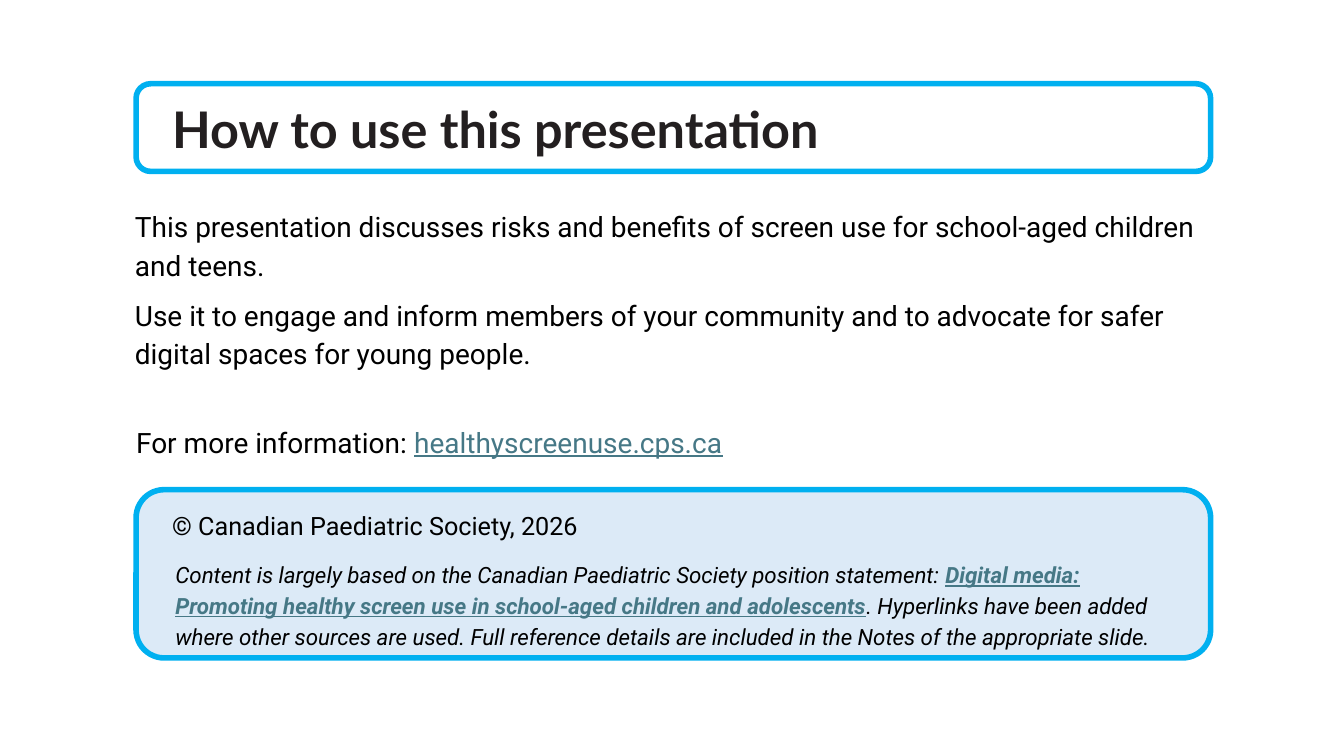
from pptx import Presentation
from pptx import util as u
from pptx.dml.color import RGBColor
from pptx.enum import shapes, text

BLACK = RGBColor(0, 0, 0)
INK = RGBColor(0x23, 0x1F, 0x20)
SKY = RGBColor(0x00, 0xB0, 0xF0)
PALE = RGBColor(0xDC, 0xEA, 0xF7)
TEAL = RGBColor(0x46, 0x78, 0x86)

HEAD = {"name": "Lato", "size": u.Pt(36), "bold": True}
BODY = {"name": "Roboto", "size": u.Pt(20)}
RIGHTS = {"name": "Roboto", "size": u.Pt(18)}
NOTE = {"name": "Roboto", "size": u.Pt(16), "italic": True}
LINK = {"underline": True}
BOLD = {"underline": True, "bold": True}
LOOSE = {"line_spacing": 1.15, "space_after": u.Pt(8)}


def apply(obj, vals):
    """Set each named attribute on an object."""
    for key, val in vals.items():
        setattr(obj, key, val)


def frame(slide, top, high, fill=None):
    """Draw a rounded frame with a blue outline."""
    box = slide.shapes.add_shape(
        shapes.MSO_SHAPE.ROUNDED_RECTANGLE,
        u.Cm(3.43), u.Cm(top), u.Cm(27.08), u.Cm(high))
    box.shadow.inherit = False
    box.line.color.rgb = SKY
    box.line.width = u.Pt(4)
    if fill is None:
        box.fill.background()
    else:
        box.fill.solid()
        box.fill.fore_color.rgb = fill


def write(slide, place, paras, font, para=LOOSE):
    """Add a text box from paragraphs of (text, colour, extras) runs."""
    box = slide.shapes.add_textbox(*map(u.Cm, place))
    area = box.text_frame
    apply(area, {"word_wrap": True,
                 "auto_size": text.MSO_AUTO_SIZE.SHAPE_TO_FIT_TEXT})
    for i, runs in enumerate(paras):
        line = area.add_paragraph() if i else area.paragraphs[0]
        apply(line, para)
        for words, color, extra in runs:
            run = line.add_run()
            run.text = words
            apply(run.font, {**font, **extra})
            run.font.color.rgb = color


def main():
    """Build the slide and save it."""
    deck = Presentation()
    apply(deck, {"slide_width": u.Cm(33.87), "slide_height": u.Cm(19.05)})
    slide = deck.slides.add_slide(deck.slide_layouts[6])

    write(slide, (3.15, 5.03, 27.41, 4.42), [
        [("This presentation discusses risks and benefits of screen use "
          "for school-aged children and teens.", BLACK, {})],
        [("Use it to engage and inform members of your community and to "
          "advocate for safer digital spaces for young people.", BLACK, {})],
    ], BODY)

    frame(slide, 2.11, 2.21)
    write(slide, (4.09, 2.34, 25.96, 1.8),
          [[("How to use this presentation", INK, {})]], HEAD, {})

    frame(slide, 12.34, 4.24, PALE)
    write(slide, (4.17, 13.92, 25.96, 2.57), [[
        ("Content is largely based on the Canadian Paediatric Society "
         "position statement: ", BLACK, {}),
        ("Digital media: Promoting healthy screen use in school-aged "
         "children and adolescents", TEAL, BOLD),
        (". Hyperlinks have been added where other sources are used. Full "
         "reference details are included in the Notes of the appropriate "
         "slide.", BLACK, {}),
    ]], NOTE)
    write(slide, (4.09, 12.62, 25.96, 1.09),
          [[("© Canadian Paediatric Society, 2026", BLACK, {})]], RIGHTS)

    write(slide, (3.18, 10.46, 27.08, 1.19), [[
        ("For more information: ", BLACK, {}),
        ("healthyscreenuse.cps.ca", TEAL, LINK),
    ]], BODY)
    deck.save("out.pptx")


if __name__ == "__main__":
    main()
